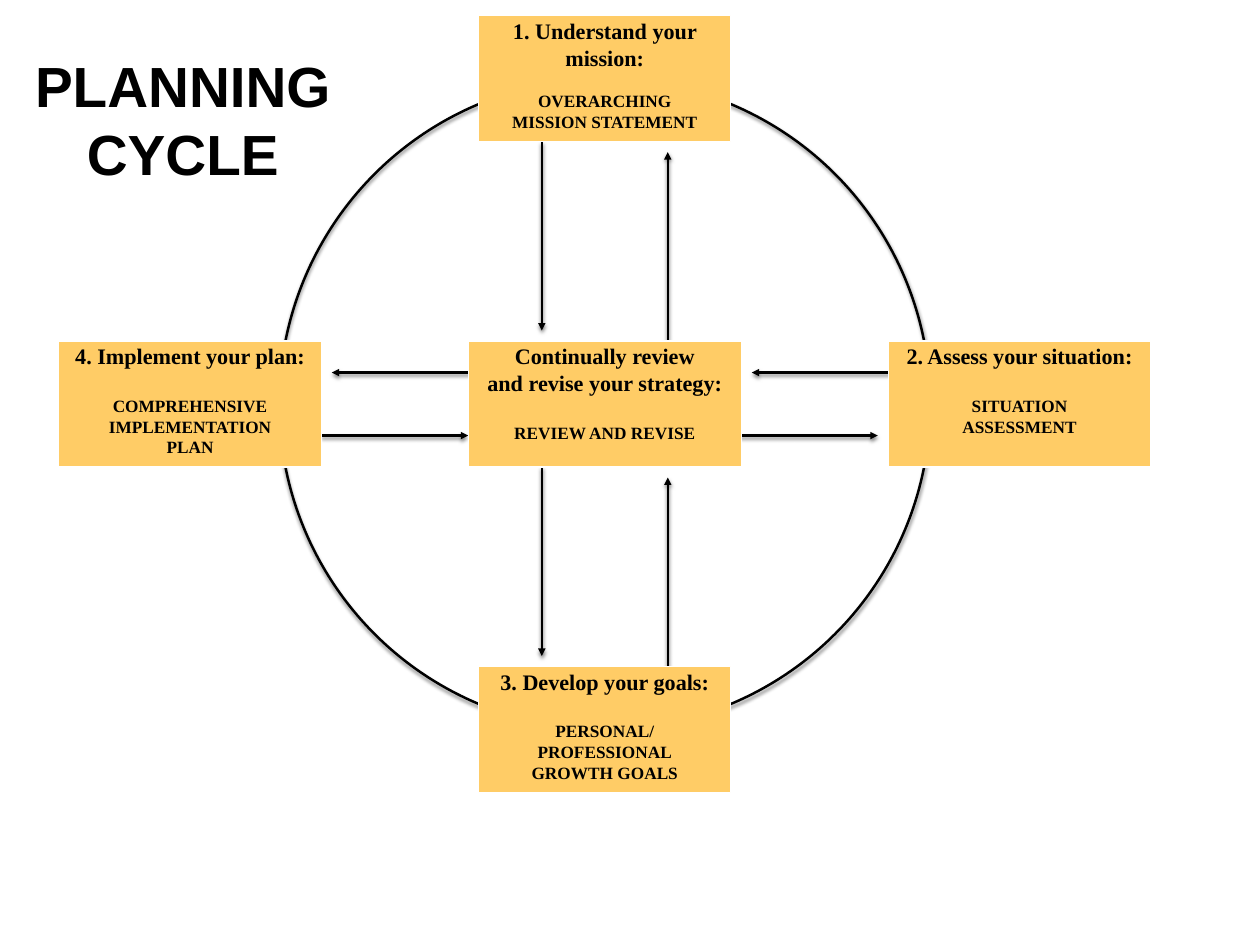
from lxml.etree import SubElement
from pptx import Presentation
from pptx.dml.color import RGBColor
from pptx.enum.shapes import MSO_CONNECTOR as Connector, MSO_SHAPE as Shape
from pptx.enum.text import MSO_ANCHOR as Anchor, MSO_AUTO_SIZE as AutoSize, PP_ALIGN as Align
from pptx.oxml.ns import qn
from pptx.util import Inches, Pt

SLIDE_WIDTH, SLIDE_HEIGHT = 14.22, 10.67
COLUMNS = 120
UNIT = SLIDE_WIDTH / COLUMNS
CENTER_X, CENTER_Y = 57.6, 38.5
RADIUS, SIDE_OFFSET = 31, 39.5
BOX_HEIGHT = 12
LANE_X, LANE_Y = 6, 3
BLACK, WHITE, AMBER = "000000", "FFFFFF", "FFCC66"

STEPS = [
    (0, -RADIUS, 24, ["1. Understand your mission:"], 16,
     ["OVERARCHING", "MISSION STATEMENT"]),
    (SIDE_OFFSET, 0, 25, ["2. Assess your situation:"], 21,
     ["SITUATION", "ASSESSMENT"]),
    (0, RADIUS, 24, ["3. Develop your goals:"], 21,
     ["PERSONAL/", "PROFESSIONAL", "GROWTH GOALS"]),
    (-SIDE_OFFSET, 0, 25, ["4. Implement your plan:"], 21,
     ["COMPREHENSIVE", "IMPLEMENTATION", "PLAN"]),
    (0, 0, 26, ["Continually review", "and revise your strategy:"], 21,
     ["REVIEW AND REVISE"]),
]
VERTICAL_ARROWS = [(-LANE_X, -25, -7), (LANE_X, -6, -24), (-LANE_X, 6, 24), (LANE_X, 25, 7)]
HORIZONTAL_ARROWS = [(-LANE_Y, -12, -26), (LANE_Y, -27, -13), (-LANE_Y, 28, 14), (LANE_Y, 12, 26)]


def color(value):
    return RGBColor.from_string(value)


def grid(*counts):
    return [Inches(count * UNIT) for count in counts]


def around_center(x, y, width, height):
    return grid(CENTER_X + x - width / 2, CENTER_Y + y - height / 2, width, height)


def write(paragraph, text, size, font="Times New Roman", before=0):
    paragraph.alignment = Align.CENTER
    paragraph.space_before = Pt(before)
    run = paragraph.add_run()
    run.text = text
    run.font.name, run.font.size, run.font.bold = font, Pt(size), True
    run.font.color.rgb = color(BLACK)


def set_frame(frame, anchor, side, top):
    frame.word_wrap = True
    frame.auto_size = AutoSize.NONE
    frame.vertical_anchor = anchor
    frame.margin_left = frame.margin_right = Inches(side)
    frame.margin_top = frame.margin_bottom = Inches(top)


def set_line(line, value, width):
    line.color.rgb = color(value)
    line.width = Pt(width)


def add_shadow(properties):
    effects = properties.find(qn("a:effectLst"))
    if effects is None:
        effects = SubElement(properties, qn("a:effectLst"))
    shadow = SubElement(effects, qn("a:outerShdw"), blurRad=str(Pt(3)), dist=str(Pt(2)),
                        dir="5400000", rotWithShape="0")
    shade = SubElement(shadow, qn("a:srgbClr"), val=BLACK)
    SubElement(shade, qn("a:alpha"), val="50000")


def add_title(slide, left, top, width, height):
    title = slide.shapes.title
    title.left, title.top, title.width, title.height = grid(left, top, width, height)
    set_frame(title.text_frame, Anchor.MIDDLE, 0.14, 0.07)
    write(title.text_frame.paragraphs[0], "PLANNING CYCLE", 46, font="Arial")


def add_circle(slide):
    circle = slide.shapes.add_shape(Shape.OVAL, *around_center(0, 0, 2 * RADIUS, 2 * RADIUS))
    circle.shadow.inherit = False
    circle.fill.background()
    set_line(circle.line, BLACK, 2)
    add_shadow(circle.element.spPr)


def add_arrow(slide, start, end):
    points = grid(CENTER_X + start[0], CENTER_Y + start[1], CENTER_X + end[0], CENTER_Y + end[1])
    arrow = slide.shapes.add_connector(Connector.STRAIGHT, *points)
    set_line(arrow.line, BLACK, 2)
    properties = arrow.element.spPr
    SubElement(properties.find(qn("a:ln")), qn("a:tailEnd"), type="triangle")
    add_shadow(properties)


def add_arrows(slide):
    for lane, start, end in VERTICAL_ARROWS:
        add_arrow(slide, (lane, start), (lane, end))
    for lane, start, end in HORIZONTAL_ARROWS:
        add_arrow(slide, (start, lane), (end, lane))


def add_step(slide, x, y, width, heading, gap, details):
    box = slide.shapes.add_shape(Shape.RECTANGLE, *around_center(x, y, width, BOX_HEIGHT))
    box.shadow.inherit = False
    box.fill.solid()
    box.fill.fore_color.rgb = color(AMBER)
    set_line(box.line, WHITE, 1)
    frame = box.text_frame
    set_frame(frame, Anchor.TOP, 0.02, 0.02)
    for index, text in enumerate(heading):
        paragraph = frame.add_paragraph() if index else frame.paragraphs[0]
        write(paragraph, text, 18)
    for index, text in enumerate(details):
        write(frame.add_paragraph(), text, 14, before=0 if index else gap)


def main():
    presentation = Presentation()
    presentation.slide_width = Inches(SLIDE_WIDTH)
    presentation.slide_height = Inches(SLIDE_HEIGHT)
    slide = presentation.slides.add_slide(presentation.slide_layouts[5])
    add_title(slide, 1.9, 4.2, 31, 14.3)
    add_circle(slide)
    add_arrows(slide)
    for step in STEPS:
        add_step(slide, *step)
    presentation.save("out.pptx")


if __name__ == "__main__":
    main()
